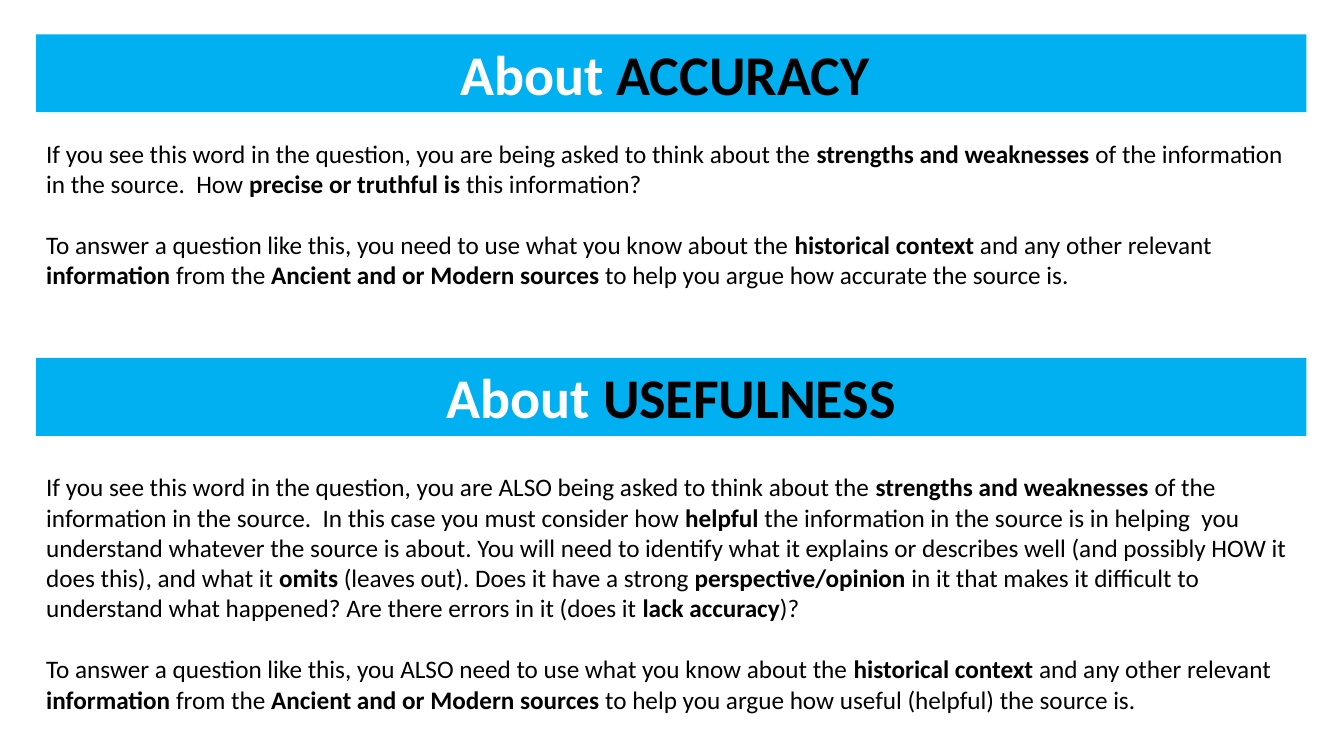
from pptx import Presentation
from pptx.dml.color import RGBColor
from pptx.enum.shapes import MSO_SHAPE
from pptx.enum.text import MSO_ANCHOR, MSO_AUTO_SIZE, PP_ALIGN
from pptx.util import Pt

COLORS = {"banner": "00B0F0", "light": "FFFFFF", "dark": "000000"}
LEFT, WIDTH = 25.9, 907.2

SECTIONS = [
    {
        "word": "ACCURACY ",
        "banner_top": 24.5,
        "text_top": 95,
        "text_height": 138.5,
        "paragraphs": [
            "If you see this word in the question, you are being asked to think about the "
            "**strengths and weaknesses **of the information in the source.  How "
            "**precise or truthful is **this information?",
            "To answer a question like this, you need to use what you know about the "
            "**historical context **and any other relevant **information** from the "
            "**Ancient and or Modern sources **to help you argue how accurate the source is.",
        ],
    },
    {
        "word": "USEFULNESS",
        "banner_top": 255.6,
        "text_top": 333.4,
        "text_height": 203.5,
        "paragraphs": [
            "If you see this word in the question, you are ALSO being asked to think about the "
            "**strengths and weaknesses **of the information in the source.  In this case you "
            "must consider how **helpful** the information in the source is in helping  you "
            "understand whatever the source is about. You will need to identify what it explains "
            "or describes well (and possibly HOW it does this), and what it **omits **(leaves out). "
            "Does it have a strong **perspective/opinion **in it that makes it difficult to "
            "understand what happened? Are there errors in it (does it **lack accuracy**)?",
            "To answer a question like this, you ALSO need to use what you know about the "
            "**historical context **and any other relevant **information** from the "
            "**Ancient and or Modern sources **to help you argue how useful (helpful) the source is.",
        ],
    },
]


class SlideBuilder:
    font_name = "Calibri"
    title_size = 40
    body_size = 18
    paragraph_gap = 22
    banner_height = 55.7

    def __init__(self, slide):
        self.slide = slide

    def color(self, name):
        return RGBColor.from_string(COLORS[name])

    def style(self, paragraph, size):
        paragraph.font.name = self.font_name
        paragraph.font.size = Pt(size)

    def banner(self, top, word):
        shape = self.slide.shapes.add_shape(
            MSO_SHAPE.RECTANGLE, Pt(LEFT), Pt(top), Pt(WIDTH), Pt(self.banner_height)
        )
        shape.shadow.inherit = False
        shape.fill.solid()
        shape.fill.fore_color.rgb = self.color("banner")
        shape.line.fill.background()
        frame = shape.text_frame
        frame.word_wrap = True
        frame.auto_size = MSO_AUTO_SIZE.SHAPE_TO_FIT_TEXT
        frame.vertical_anchor = MSO_ANCHOR.TOP
        paragraph = frame.paragraphs[0]
        paragraph.alignment = PP_ALIGN.CENTER
        self.style(paragraph, self.title_size)
        paragraph.font.bold = True
        for text, color in (("About ", "light"), (word, "dark")):
            run = paragraph.add_run()
            run.text = text
            run.font.color.rgb = self.color(color)

    def body(self, top, height, texts):
        shape = self.slide.shapes.add_textbox(Pt(LEFT), Pt(top), Pt(WIDTH), Pt(height))
        frame = shape.text_frame
        frame.word_wrap = True
        frame.auto_size = MSO_AUTO_SIZE.SHAPE_TO_FIT_TEXT
        for index, text in enumerate(texts):
            paragraph = frame.add_paragraph() if index else frame.paragraphs[0]
            paragraph.space_before = Pt(self.paragraph_gap if index else 0)
            self.style(paragraph, self.body_size)
            paragraph.font.color.rgb = self.color("dark")
            for position, part in enumerate(text.split("**")):
                run = paragraph.add_run()
                run.text = part
                if position % 2:
                    run.font.bold = True


def main():
    presentation = Presentation()
    presentation.slide_width = Pt(960)
    presentation.slide_height = Pt(540)
    builder = SlideBuilder(presentation.slides.add_slide(presentation.slide_layouts[6]))
    for section in SECTIONS:
        builder.banner(section["banner_top"], section["word"])
        builder.body(section["text_top"], section["text_height"], section["paragraphs"])
    presentation.save("out.pptx")


if __name__ == "__main__":
    main()
